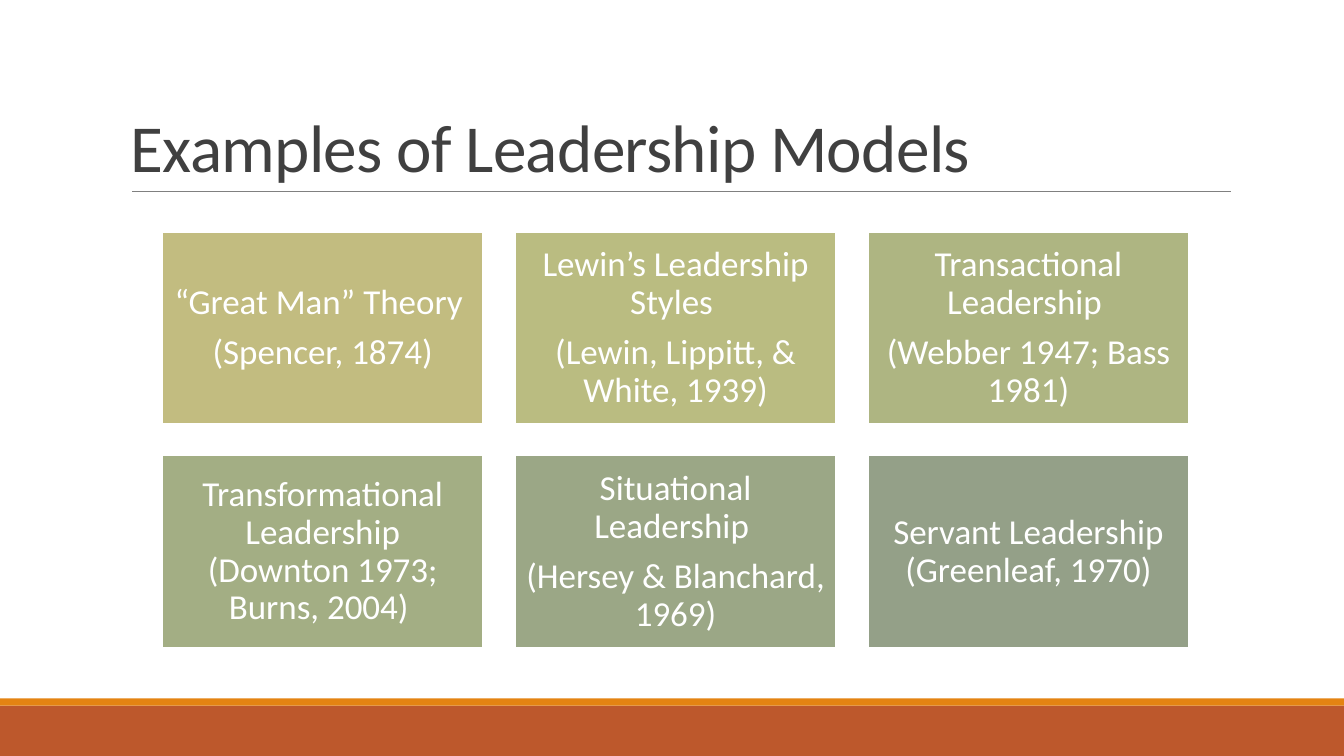
from lxml.etree import SubElement
from pptx import Presentation
from pptx.dml.color import RGBColor
from pptx.enum.shapes import MSO_CONNECTOR as Connector, MSO_SHAPE as Shape
from pptx.enum.text import MSO_ANCHOR as Anchor, PP_ALIGN as Align
from pptx.oxml.ns import qn
from pptx.util import Inches, Pt

FONT = "Calibri"
MODELS = [
    ("C2BC80", ["“Great Man” Theory ", "(Spencer, 1874)"]),
    ("BABC81", ["Lewin’s Leadership Styles ", "(Lewin, Lippitt, & White, 1939)"]),
    ("AEB582", ["Transactional Leadership ", "(Webber 1947; Bass 1981)"]),
    ("A3AE84", ["Transformational Leadership (Downton 1973; Burns, 2004) "]),
    ("9BA786", ["Situational Leadership ", "(Hersey & Blanchard, 1969)"]),
    ("94A088", ["Servant Leadership (Greenleaf, 1970)"]),
]


def color(code):
    return RGBColor.from_string(code)


def add_span(para, text, size, code):
    span = para.add_run()
    span.text = text
    span.font.name = FONT
    span.font.size = Pt(size)
    span.font.color.rgb = color(code)
    return span


def add_block(page, left, top, width, height, fill, outline=None):
    block = page.shapes.add_shape(
        Shape.RECTANGLE, Inches(left), Inches(top), Inches(width), Inches(height))
    block.shadow.inherit = False
    block.fill.solid()
    block.fill.fore_color.rgb = color(fill)
    if outline:
        block.line.color.rgb = color(outline)
        block.line.width = Pt(1.25)
    else:
        block.line.fill.background()
    return block


def add_footer(page, left, top, width, height):
    stripe = 0.07
    add_block(page, left, top + stripe, width, height - stripe, "BD582C")
    add_block(page, left, top, width, stripe, "E48312")


def add_title(page, left, top, width, height, text):
    inset = 0.11
    base = Inches(top + height)
    rule = page.shapes.add_connector(
        Connector.STRAIGHT, Inches(left + inset), base, Inches(left + width + 0.01), base)
    rule.line.color.rgb = color("808080")
    rule.line.width = Pt(0.5)
    SubElement(rule._element.spPr, qn("a:effectLst"))

    box = page.shapes.add_textbox(Inches(left), Inches(top), Inches(width), Inches(height))
    frame = box.text_frame
    frame.word_wrap = True
    frame.vertical_anchor = Anchor.BOTTOM
    para = frame.paragraphs[0]
    para.line_spacing = 0.85
    span = add_span(para, text, 48, "404040")
    span.font._element.set("spc", "-50")


def add_card(page, left, top, width, height, fill, lines):
    frame = add_block(page, left, top, width, height, fill, "FFFFFF").text_frame
    frame.word_wrap = True
    frame.vertical_anchor = Anchor.MIDDLE
    frame.margin_left = frame.margin_right = Inches(0.1)
    frame.margin_top = frame.margin_bottom = Inches(0.1)
    for index, line in enumerate(lines):
        para = frame.add_paragraph() if index else frame.paragraphs[0]
        para.alignment = Align.CENTER
        para.line_spacing = 0.9
        para.space_after = Pt(8.75)
        add_span(para, line, 25, "FFFFFF")


def add_model_grid(page, left, top, width, height, models):
    columns, rows = 3, 2
    card_width, card_height = 3.18, 1.91
    step_x = (width - card_width) / (columns - 1)
    step_y = (height - card_height) / (rows - 1)
    for index, (fill, lines) in enumerate(models):
        row, column = divmod(index, columns)
        add_card(page, left + column * step_x, top + row * step_y,
                 card_width, card_height, fill, lines)


def main():
    deck = Presentation()
    deck.slide_width = Inches(13.33)
    deck.slide_height = Inches(7.5)
    page = deck.slides.add_slide(deck.slide_layouts[6])
    add_footer(page, 0, 6.93, 13.33, 0.57)
    add_title(page, 1.2, 0.31, 11, 1.59, "Examples of Leadership Models")
    add_model_grid(page, 1.61, 2.3, 10.18, 4.13, MODELS)
    deck.save("out.pptx")


if __name__ == "__main__":
    main()
